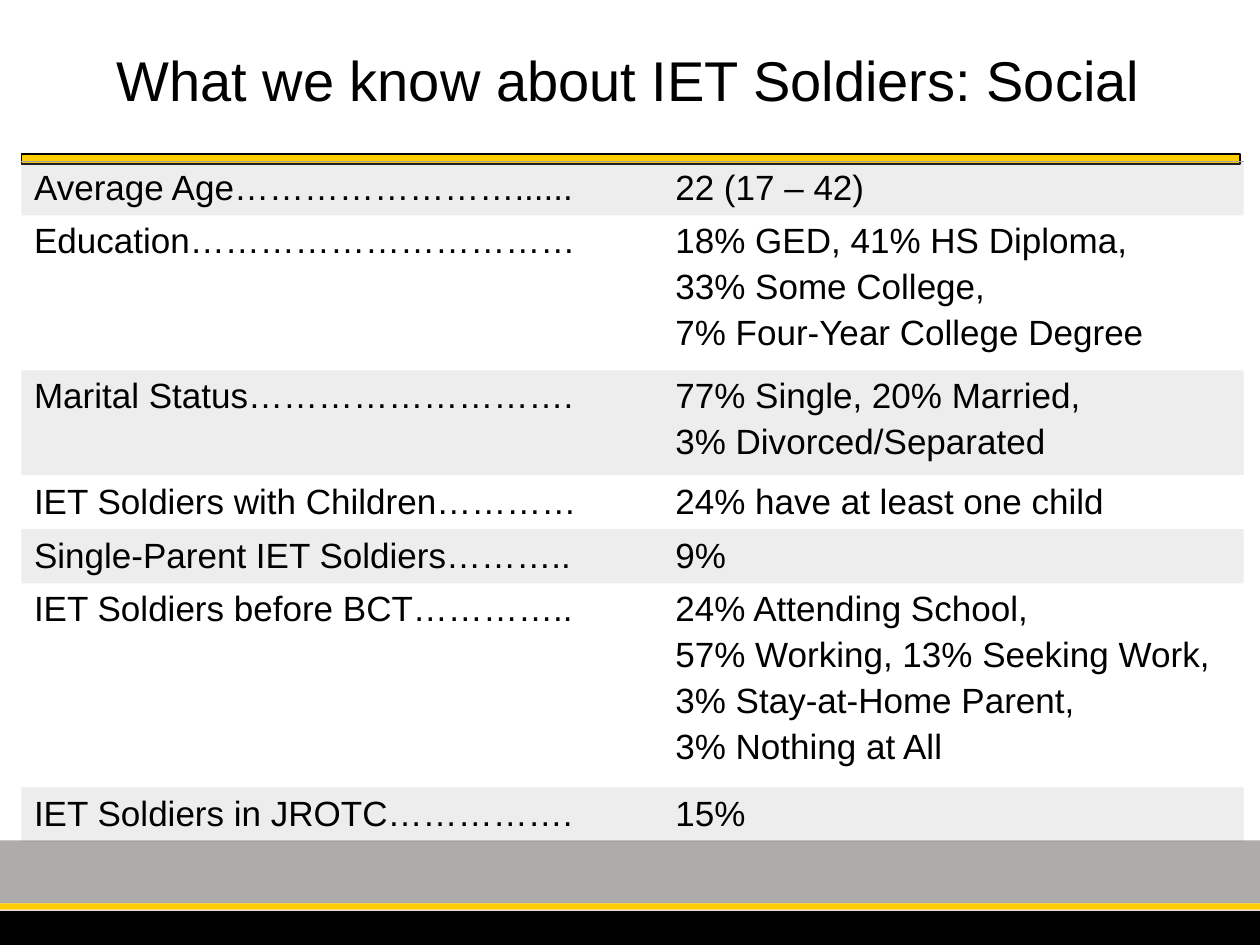
from dataclasses import dataclass

from lxml import etree
from pptx import Presentation
from pptx.dml.color import RGBColor
from pptx.enum.shapes import MSO_SHAPE
from pptx.enum.text import MSO_ANCHOR, PP_ALIGN
from pptx.oxml.ns import qn
from pptx.util import Inches, Pt

RECT = MSO_SHAPE.RECTANGLE
TOP, MIDDLE = MSO_ANCHOR.TOP, MSO_ANCHOR.MIDDLE
LEFT, CENTER = PP_ALIGN.LEFT, PP_ALIGN.CENTER

BLACK = RGBColor(0x00, 0x00, 0x00)
GOLD = RGBColor(0xFF, 0xCC, 0x00)
WARM_GRAY = RGBColor(0xAF, 0xAB, 0xAB)
GRAY = RGBColor(0xA5, 0xA5, 0xA5)

FONT = "Arial"
NO_STYLE = "{2D5ABB26-0587-4C30-8999-92F81FD0307C}"
COLUMNS = (5.09, 4.61)


@dataclass(frozen=True)
class Bar:
    left: float
    top: float
    width: float
    height: float
    color: RGBColor
    outlined: bool = False


@dataclass(frozen=True)
class Fact:
    label: str
    values: tuple[str, ...]
    height: float = 0.43


BARS = (
    Bar(0, 6.67, 10, 0.5, WARM_GRAY),
    Bar(0, 7.17, 10, 0.05, GOLD),
    Bar(0, 7.23, 10, 0.27, BLACK),
    Bar(0.17, 1.22, 9.67, 0.08, GOLD, outlined=True),
)

FACTS = (
    Fact("Average Age……………………......", ("22 (17 – 42)",)),
    Fact("Education……………………………",
         ("18% GED, 41% HS Diploma,", "33% Some College,",
          "7% Four-Year College Degree"), 1.23),
    Fact("Marital Status……………………….",
         ("77% Single, 20% Married,", "3% Divorced/Separated"), 0.83),
    Fact("IET Soldiers with Children…………", ("24% have at least one child",)),
    Fact("Single-Parent IET Soldiers………..", ("9%",)),
    Fact("IET Soldiers before BCT…………..",
         ("24% Attending School,", "57% Working, 13% Seeking Work,",
          "3% Stay-at-Home Parent,", "3% Nothing at All"), 1.62),
    Fact("IET Soldiers in JROTC…………….", ("15%",)),
)


def write(tf, *lines: str, size: float = 20, align=LEFT, before: float = 4) -> None:
    for i, line in enumerate(lines):
        p = tf.paragraphs[0] if i == 0 else tf.add_paragraph()
        p.alignment = align
        if i:
            p.space_before = Pt(before)
        r = p.add_run()
        r.text = line
        r.font.name, r.font.size, r.font.color.rgb = FONT, Pt(size), BLACK


def draw_bar(slide, bar: Bar) -> None:
    box = map(Inches, (bar.left, bar.top, bar.width, bar.height))
    s = slide.shapes.add_shape(RECT, *box)
    s.shadow.inherit = False
    s.fill.solid()
    s.fill.fore_color.rgb = bar.color
    if bar.outlined:
        s.line.color.rgb = BLACK
        s.line.width = Pt(1)
    else:
        s.line.fill.background()


def shade(cell, color: RGBColor, percent: int) -> None:
    cell.fill.solid()
    cell.fill.fore_color.rgb = color
    clr = cell._tc.tcPr.find(f".//{qn('a:srgbClr')}")
    etree.SubElement(clr, qn("a:alpha"), val=str(percent * 1000))


def add_border(cell, side: str, color: RGBColor) -> None:
    ln = etree.Element(qn(f"a:ln{side}"), w=str(Pt(1)))
    fill = etree.SubElement(ln, qn("a:solidFill"))
    etree.SubElement(fill, qn("a:srgbClr"), val=str(color))
    cell._tc.get_or_add_tcPr().insert(0, ln)


def draw_table(slide, facts: tuple[Fact, ...]) -> None:
    width, height = sum(COLUMNS), sum(f.height for f in facts)
    table = slide.shapes.add_table(
        len(facts), len(COLUMNS),
        Inches(0.17), Inches(1.28), Inches(width), Inches(height)).table
    table.first_row = table.horz_banding = False
    table._tbl.tblPr.find(qn("a:tableStyleId")).text = NO_STYLE
    for column, col_width in zip(table.columns, COLUMNS):
        column.width = Inches(col_width)
    for i, fact in enumerate(facts):
        table.rows[i].height = Inches(fact.height)
        for cell, lines in zip(table.rows[i].cells, ((fact.label,), fact.values)):
            write(cell.text_frame, *lines)
            cell.vertical_anchor = TOP if len(fact.values) > 1 else MIDDLE
            if i % 2 == 0:
                shade(cell, GRAY, 20)
            else:
                cell.fill.background()
            if i == 0:
                add_border(cell, "T", GRAY)
            if i == len(facts) - 1:
                add_border(cell, "B", GRAY)


def main() -> None:
    prs = Presentation()
    prs.slide_width, prs.slide_height = Inches(10), Inches(7.5)
    slide = prs.slides.add_slide(prs.slide_layouts[5])
    for bar in BARS:
        draw_bar(slide, bar)
    draw_table(slide, FACTS)
    title = slide.shapes.title
    title.left, title.top = Inches(-0.01), Inches(0.31)
    title.width, title.height = Inches(10), Inches(0.64)
    title.text_frame.vertical_anchor = MIDDLE
    write(title.text_frame, "What we know about IET Soldiers: Social",
          size=32, align=CENTER)
    prs.save("out.pptx")


if __name__ == "__main__":
    main()
